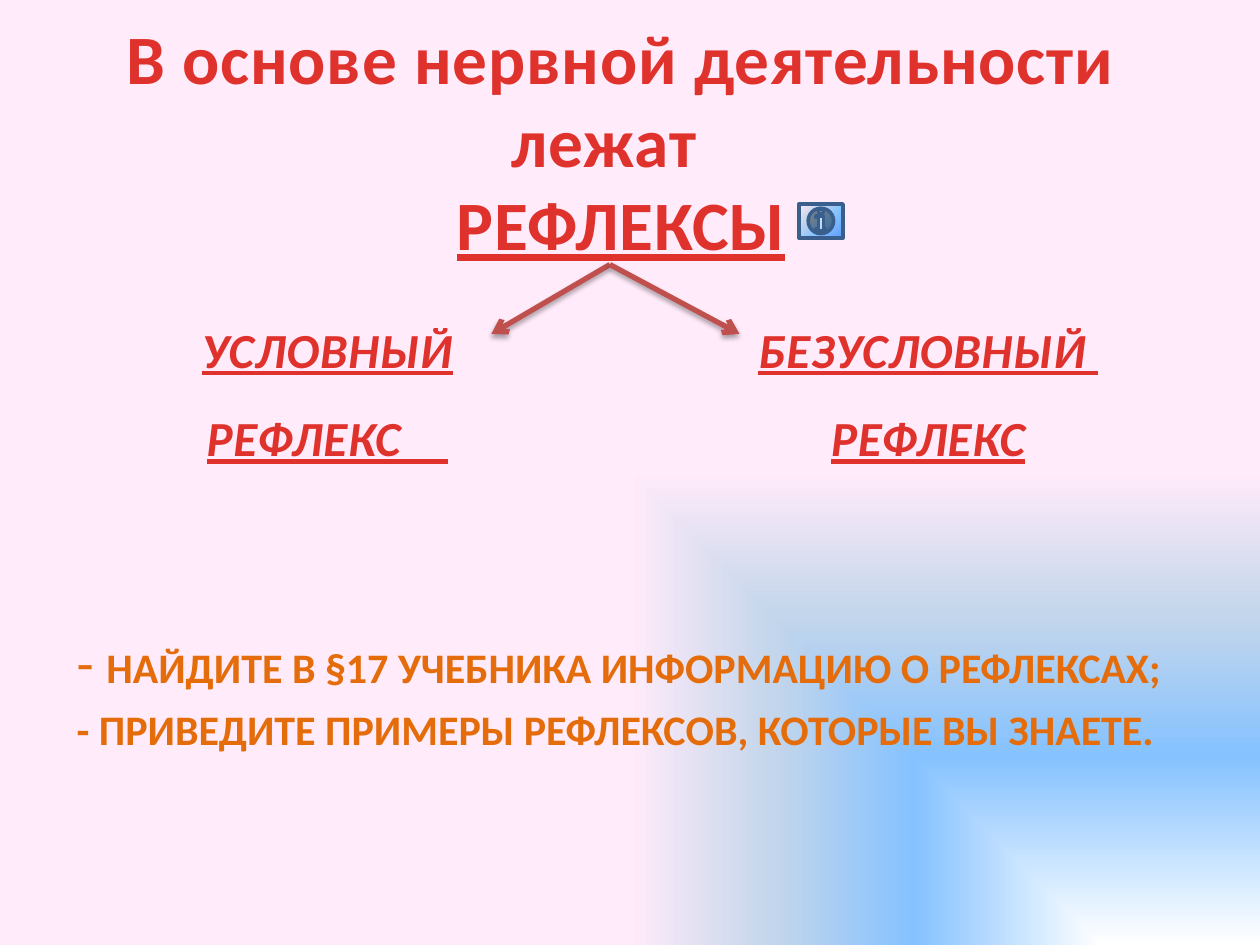
"""Build the slide on reflexes as the basis of nervous activity."""
from lxml import etree
from pptx import Presentation
from pptx import util as u
from pptx.dml.color import RGBColor
from pptx.enum import shapes, text
from pptx.oxml import parse_xml
from pptx.oxml.ns import nsdecls, qn

Pt = u.Pt
RED = [(25, "E0322D"), (100, "A2201C")]
SKY = [(40, "85C2FF"), (70, "C4D6EB"), (100, "FFEBFA")]
LINEAR = '<a:lin ang="5400000" scaled="0"/>'
CORNER = '<a:path path="{}"><a:fillToRect l="100000" t="100000"/></a:path>'


def shade(fill, owner, stops, direction):
    fill.gradient()
    gradient = next(owner.iter(qn("a:gradFill")))
    marks = "".join(f'<a:gs pos="{pos * 1000}"><a:srgbClr val="{color}"/></a:gs>' for pos, color in stops)
    gradient[:] = parse_xml(f'<a:gradFill {nsdecls("a")}><a:gsLst>{marks}</a:gsLst>{direction}</a:gradFill>')[:]


def write(paragraph, wording, color=None, **formats):
    run = paragraph.add_run()
    run.text = wording
    for name, value in {"name": "Calibri", "bold": True, **formats}.items():
        setattr(run.font, name, value)
    if color:
        run.font.color.rgb = RGBColor.from_string(color)
    else:
        shade(run.font.fill, run._r, RED, LINEAR)
        run._r.get_or_add_rPr().set("spc", "50")


deck = Presentation()
deck.slide_width, deck.slide_height = Pt(720), Pt(540)
slide = deck.slides.add_slide(deck.slide_layouts[5])
shade(slide.background.fill, slide.element, [(0, "FFFFFF")] + SKY, CORNER.format("rect"))

title = slide.shapes.title
title.left, title.top, title.width, title.height = Pt(25.2), Pt(20.9), Pt(659.5), Pt(118)
title.text_frame.auto_size = text.MSO_AUTO_SIZE.NONE
title.text_frame.vertical_anchor = text.MSO_ANCHOR.MIDDLE
heading = title.text_frame.paragraphs[0]
heading.alignment = text.PP_ALIGN.CENTER
write(heading, "В основе нервной деятельности лежат  ", size=Pt(39.6))
heading.add_line_break()
write(heading, "РЕФЛЕКСЫ", size=Pt(39.6), underline=True)

tasks = slide.shapes.add_textbox(Pt(36.7), Pt(355), Pt(648), Pt(102.2)).text_frame
tasks.word_wrap = True
for index, task in enumerate([
    [("- ", 32, False), ("НАЙДИТЕ В §17 УЧЕБНИКА ИНФОРМАЦИЮ О РЕФЛЕКСАХ;", 24, True)],
    [("- ПРИВЕДИТЕ ПРИМЕРЫ РЕФЛЕКСОВ, КОТОРЫЕ ВЫ ЗНАЕТЕ.", 24, True)],
]):
    line = tasks.add_paragraph() if index else tasks.paragraphs[0]
    props = line._p.get_or_add_pPr()
    props.set("marL", str(Pt(27)))
    props.set("indent", str(-Pt(27)))
    if index:
        line.space_before = Pt(4.8)
    for wording, size, bold in task:
        write(line, wording, "E46C0A", size=Pt(size), bold=bold)

for left, top, width, anchor, after, lines in [
    (87.8, 162, 198.7, text.MSO_ANCHOR.TOP, 10, ["УСЛОВНЫЙ РЕФЛЕКС    "]),
    (416.9, 164.2, 226.8, text.MSO_ANCHOR.MIDDLE, 0, ["БЕЗУСЛОВНЫЙ ", "РЕФЛЕКС"]),
]:
    reflex = slide.shapes.add_textbox(Pt(left), Pt(top), Pt(width), Pt(103.7)).text_frame
    reflex.word_wrap = True
    reflex.auto_size = text.MSO_AUTO_SIZE.SHAPE_TO_FIT_TEXT
    reflex.vertical_anchor = anchor
    for index, wording in enumerate(lines):
        line = reflex.add_paragraph() if index else reflex.paragraphs[0]
        line.alignment = text.PP_ALIGN.CENTER
        line.line_spacing = 1.5
        line.space_after = Pt(after)
        write(line, wording, size=Pt(28), italic=True, underline=True)

for end in (280.8, 422.6):
    branch = slide.shapes.add_connector(shapes.MSO_CONNECTOR.STRAIGHT, Pt(348.5), Pt(151.2), Pt(end), Pt(190.8))
    branch.line.color.rgb = RGBColor.from_string("C0504D")
    branch.line.width = Pt(3)
    etree.SubElement(branch.line._get_or_add_ln(), qn("a:tailEnd"), type="arrow")
    branch._element.spPr.append(parse_xml(
        f'<a:effectLst {nsdecls("a")}><a:outerShdw blurRad="{Pt(3.1)}" dist="{Pt(1.8)}" dir="5400000" '
        'rotWithShape="0"><a:srgbClr val="000000"><a:alpha val="35000"/></a:srgbClr></a:outerShdw></a:effectLst>'))

info = slide.shapes.add_shape(
    shapes.MSO_SHAPE.ACTION_BUTTON_INFORMATION, Pt(456.5), Pt(116.6), Pt(25.2), Pt(19.4))
info.shadow.inherit = False
shade(info.fill, info._element, [(0, "5E9EFF")] + SKY, CORNER.format("circle"))
info.line.color.rgb = RGBColor.from_string("3A5F8C")
info.line.width = Pt(2)

deck.save("out.pptx")
